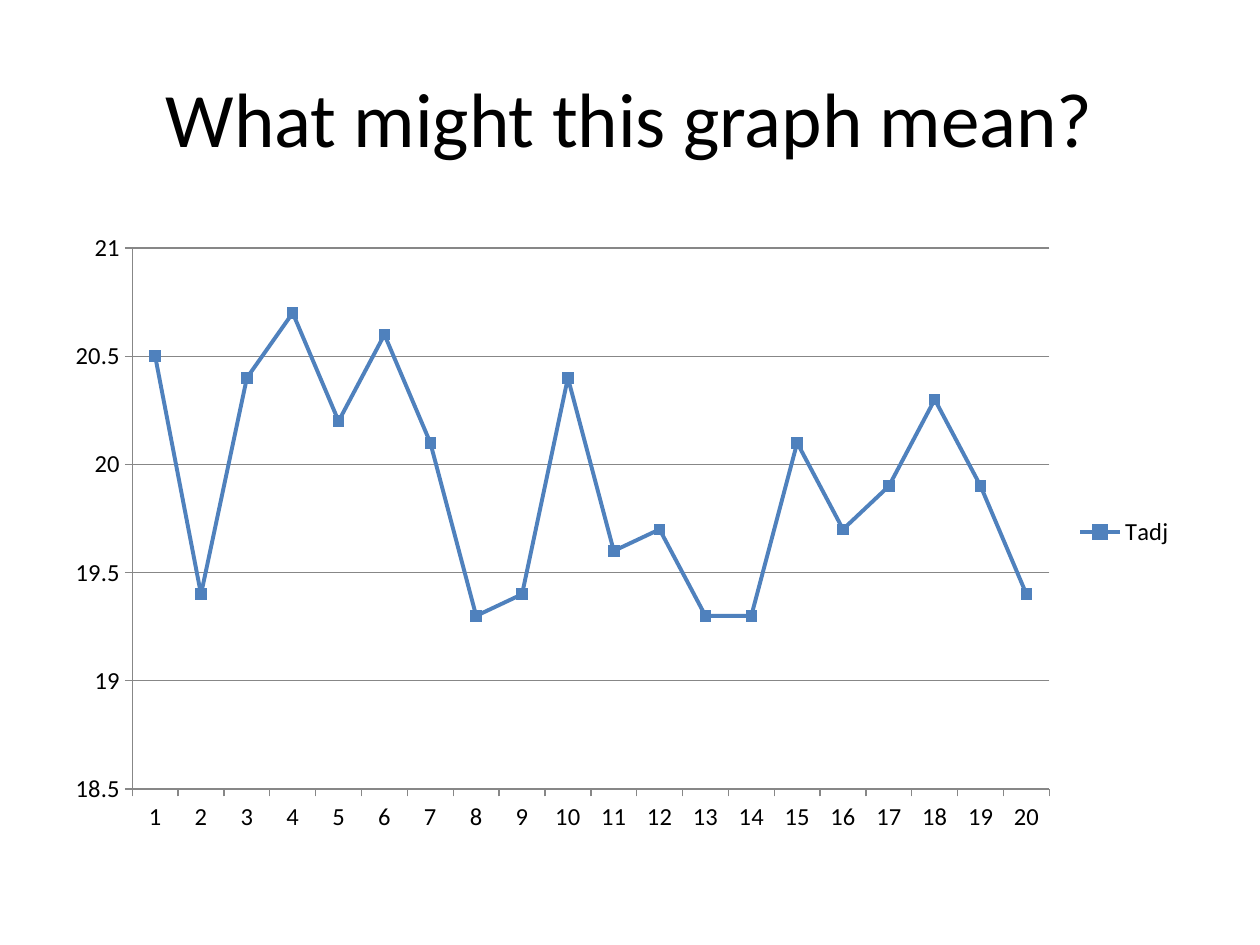
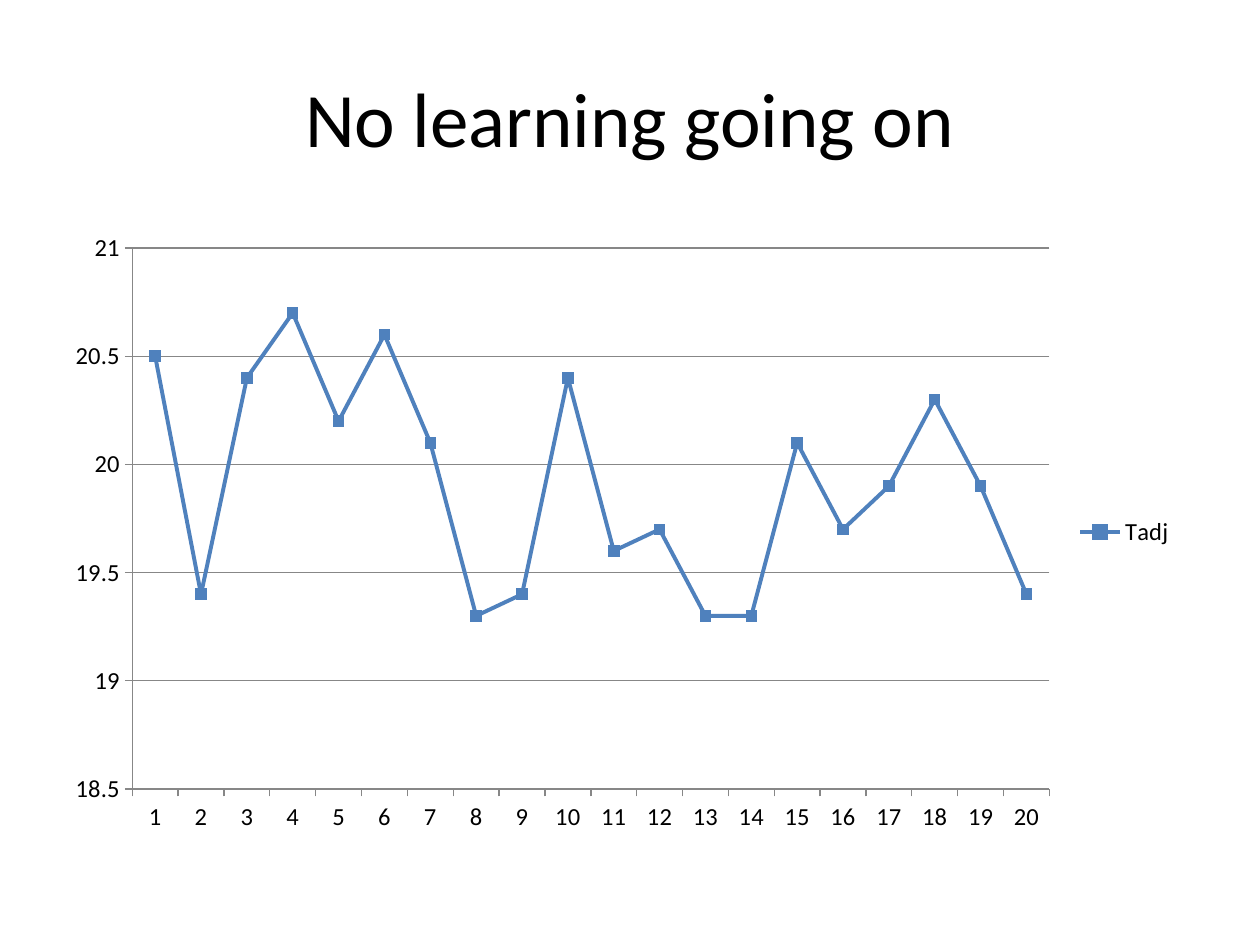
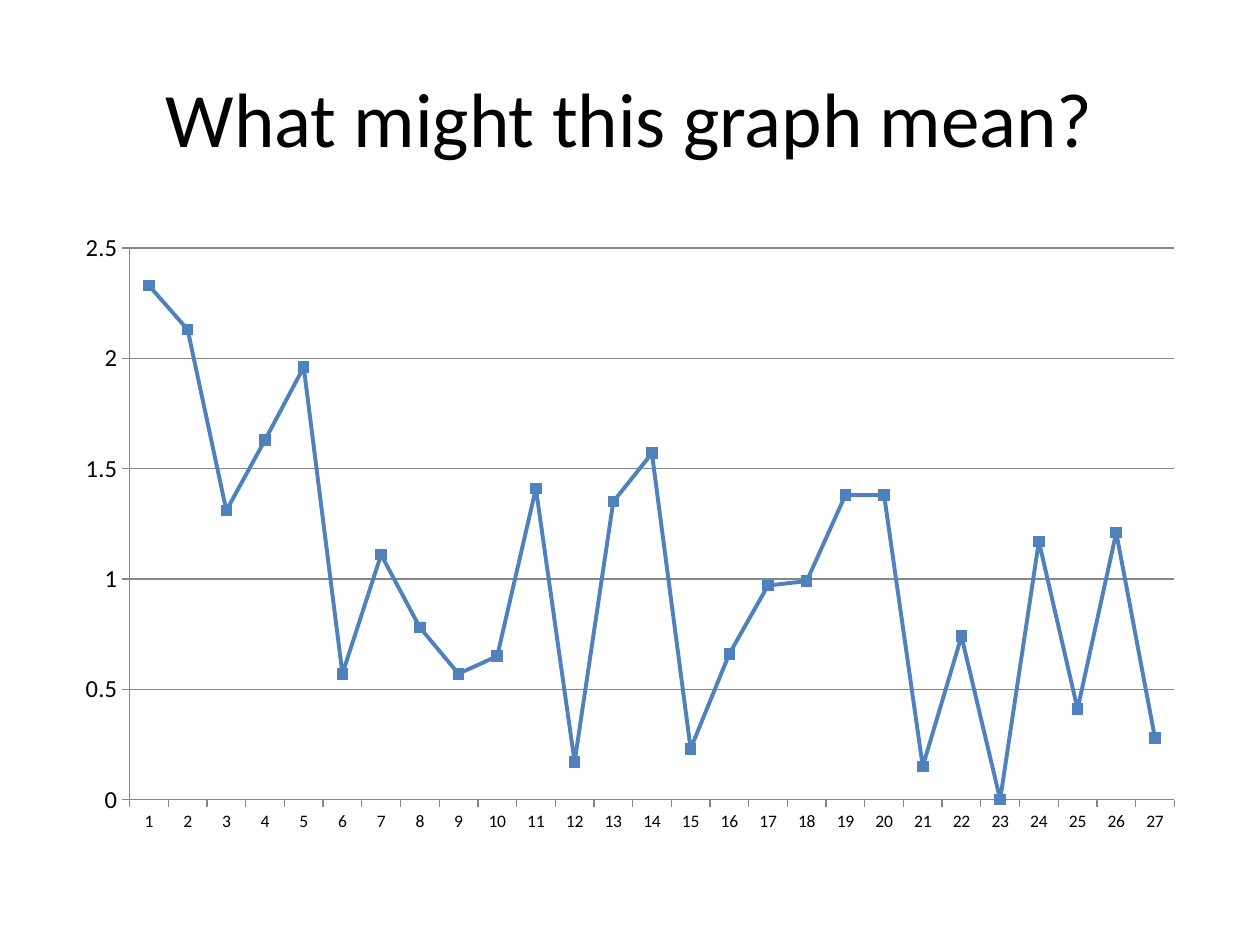
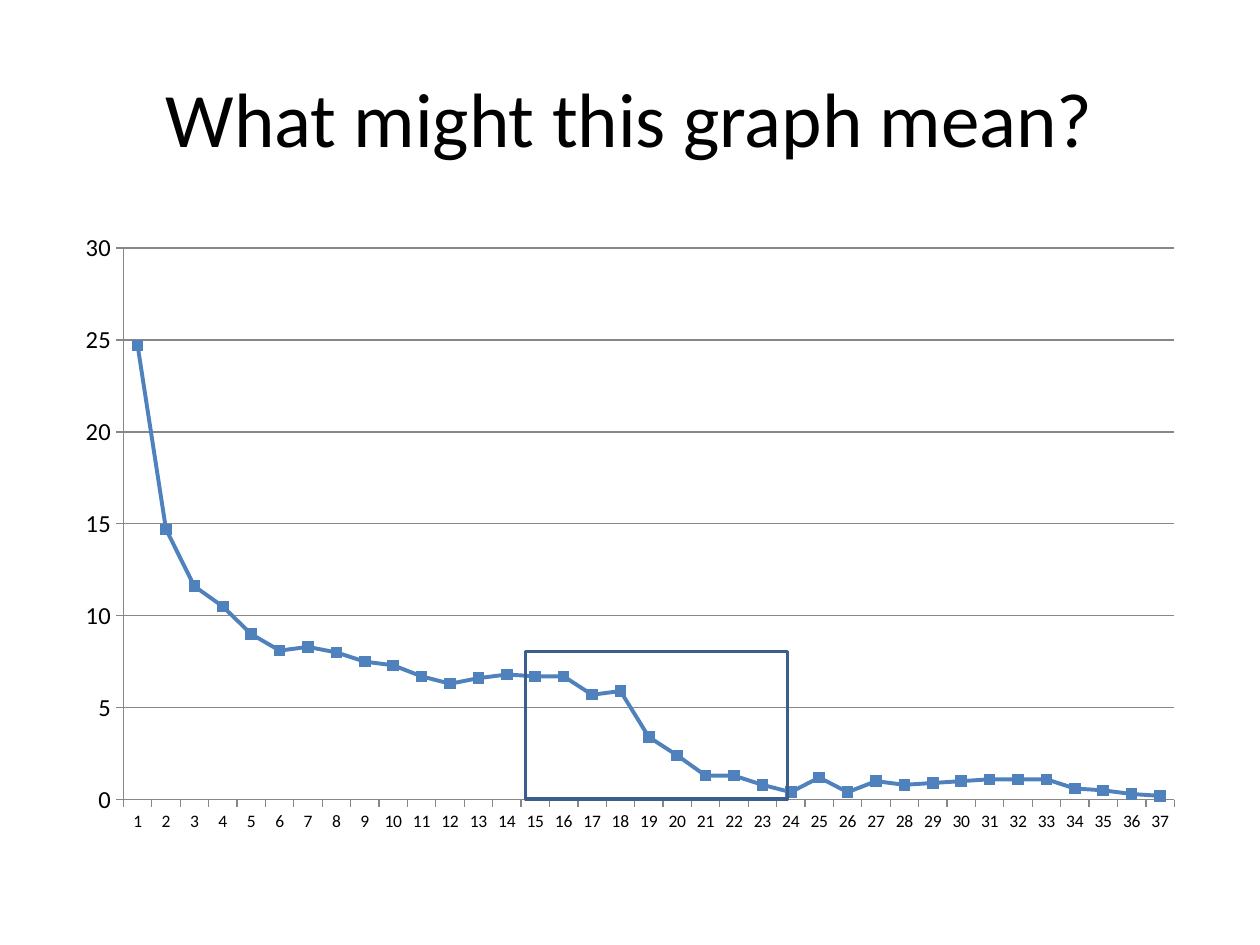
from pptx import Presentation
from pptx.chart.data import CategoryChartData as ChartData
from pptx.dml.color import RGBColor as RGB
from pptx.enum.chart import XL_CHART_TYPE as ChartType
from pptx.enum.chart import XL_LEGEND_POSITION as LegendPos
from pptx.enum.chart import XL_MARKER_STYLE as Marker
from pptx.enum.chart import XL_TICK_MARK as Tick
from pptx.enum.shapes import MSO_SHAPE as Shape
from pptx.enum.text import MSO_ANCHOR as Anchor
from pptx.enum.text import PP_ALIGN as Align
from pptx.util import Emu, Pt

# Shared style
PX = 9144  # EMU per px, 100 px to the inch
FONT = "Calibri"
COLORS = {
    "background": "FFFFFF",
    "text": "000000",
    "series": "4F81BD",
    "axis": "878787",
    "highlight": "3A5F8C",
}
TITLE_BOX = (50, 30, 900, 125)
CHART_TOP, CHART_W, CHART_H = 175, 900, 495
QUESTION = "What might this graph mean?"

# Chart values
NO_LEARNING = [20.5, 19.4, 20.4, 20.7, 20.2, 20.6, 20.1, 19.3, 19.4, 20.4,
               19.6, 19.7, 19.3, 19.3, 20.1, 19.7, 19.9, 20.3, 19.9, 19.4]
NOISY_DECLINE = [2.33, 2.13, 1.31, 1.63, 1.96, 0.57, 1.11, 0.78, 0.57,
                 0.65, 1.41, 0.17, 1.35, 1.57, 0.23, 0.66, 0.97, 0.99,
                 1.38, 1.38, 0.15, 0.74, 0, 1.17, 0.41, 1.21, 0.28]
TWO_DROPS = [24.7, 14.7, 11.6, 10.5, 9, 8.1, 8.3, 8, 7.5, 7.3, 6.7, 6.3, 6.6,
             6.8, 6.7, 6.7, 5.7, 5.9, 3.4, 2.4, 1.3, 1.3, 0.8, 0.4, 1.2, 0.4,
             1, 0.8, 0.9, 1, 1.1, 1.1, 1.1, 0.6, 0.5, 0.3, 0.2]


def color(name):
    return RGB.from_string(COLORS[name])


def emu(*lengths):
    return [Emu(n * PX) for n in lengths]


def style_line(line, name, width):
    line.color.rgb = color(name)
    line.width = Pt(width)


def style_font(font, size):
    font.name = FONT
    font.size = Pt(size)
    font.color.rgb = color("text")


def add_titled_slide(prs, title):
    s = prs.slides.add_slide(prs.slide_layouts[6])
    s.background.fill.solid()
    s.background.fill.fore_color.rgb = color("background")
    tf = s.shapes.add_textbox(*emu(*TITLE_BOX)).text_frame
    tf.word_wrap = True
    tf.vertical_anchor = Anchor.MIDDLE
    p = tf.paragraphs[0]
    p.alignment = Align.CENTER
    r = p.add_run()
    r.text = title
    style_font(r.font, 44)
    return s


def add_line_chart(s, left, name, values, scale, cat_size=10, legend=False):
    data = ChartData()
    data.categories = [str(n) for n in range(1, len(values) + 1)]
    data.add_series(name, values)
    box = emu(left, CHART_TOP, CHART_W, CHART_H)
    chart = s.shapes.add_chart(ChartType.LINE_MARKERS, *box, data).chart
    chart.has_title = False
    style_font(chart.font, cat_size)

    # Legend
    chart.has_legend = legend
    if legend:
        chart.legend.position = LegendPos.RIGHT
        chart.legend.include_in_layout = False

    # Axes
    cat_axis, val_axis = chart.category_axis, chart.value_axis
    for axis, size in ((cat_axis, cat_size), (val_axis, 14)):
        axis.major_tick_mark = Tick.OUTSIDE
        axis.minor_tick_mark = Tick.NONE
        style_line(axis.format.line, "axis", 0.75)
        style_font(axis.tick_labels.font, size)
    cat_axis.has_major_gridlines = False
    val_axis.has_major_gridlines = True
    style_line(val_axis.major_gridlines.format.line, "axis", 0.75)
    val_axis.minimum_scale, val_axis.maximum_scale, val_axis.major_unit = scale
    val_axis.tick_labels.number_format = "General"
    val_axis.tick_labels.number_format_is_linked = False

    # Series
    plot = chart.plots[0]
    plot.vary_by_categories = False
    series = plot.series[0]
    series.smooth = False
    style_line(series.format.line, "series", 2.25)
    marker = series.marker
    marker.style = Marker.SQUARE
    marker.size = 6
    marker.format.fill.solid()
    marker.format.fill.fore_color.rgb = color("series")
    marker.format.line.fill.background()


def add_highlight(s, *box):
    sp = s.shapes.add_shape(Shape.RECTANGLE, *emu(*box))
    sp.shadow.inherit = False
    sp.fill.background()
    style_line(sp.line, "highlight", 2)


def main():
    prs = Presentation()
    prs.slide_width, prs.slide_height = emu(1000, 750)

    # Slides 1 and 2: the same flat graph, first asked and then answered
    for title in (QUESTION, "No learning going on"):
        s = add_titled_slide(prs, title)
        add_line_chart(s, 42, "Tadj", NO_LEARNING, (18.5, 21, 0.5),
                       cat_size=14, legend=True)

    # Slide 3: noisy decline
    s = add_titled_slide(prs, QUESTION)
    add_line_chart(s, 50, "Series 1", NOISY_DECLINE, (0, 2.5, 0.5))

    # Slide 4: steep start, with the second drop framed
    s = add_titled_slide(prs, QUESTION)
    add_line_chart(s, 50, "Series 1", TWO_DROPS, (0, 30, 5))
    add_highlight(s, 417, 517, 208, 117)

    prs.save("out.pptx")


if __name__ == "__main__":
    main()
